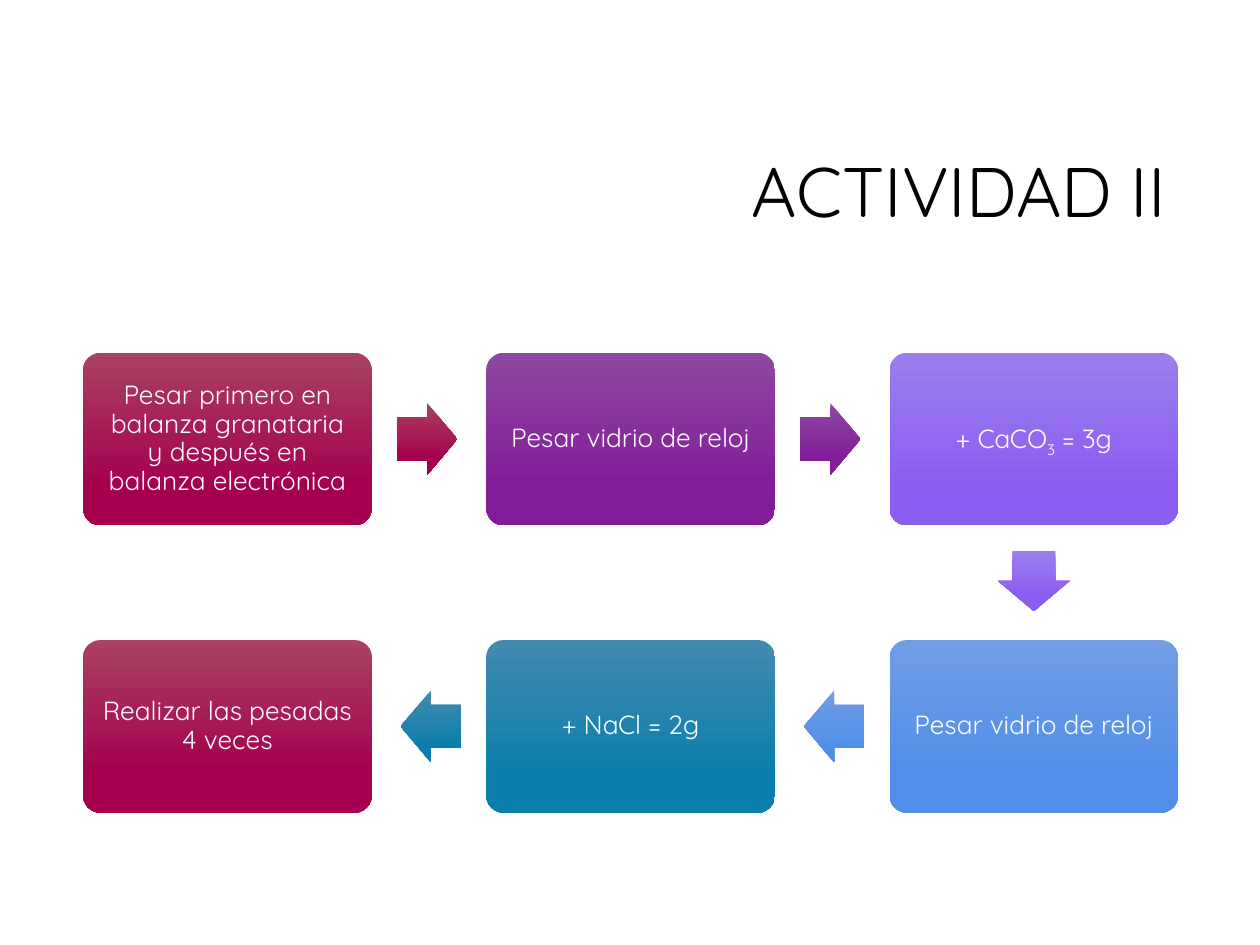
from pptx import Presentation
from pptx import util as u
from pptx.dml.color import RGBColor
from pptx.enum import shapes, text

# Content: (column, row), gradient, text runs (text, is subscript)
TITLE = "ACTIVIDAD II"
STEPS = [
    ((0, 0), "crimson", [("Pesar primero en balanza granataria y después en balanza electrónica", False)]),
    ((1, 0), "purple", [("Pesar vidrio de reloj", False)]),
    ((2, 0), "violet", [("+ CaCO", False), ("3", True), (" = 3g", False)]),
    ((2, 1), "blue", [("Pesar vidrio de reloj", False)]),
    ((1, 1), "teal", [("+ NaCl = 2g", False)]),
    ((0, 1), "crimson", [("Realizar las pesadas 4 veces", False)]),
]
COLORS = {
    "title": "000000",
    "step": "FFFFFF",
    "crimson": ("A94263", "A4004E"),
    "purple": ("8D48A0", "831C9A"),
    "violet": ("9D7DED", "8A5EF1"),
    "blue": ("729DE5", "518EE9"),
    "teal": ("438AB0", "0B7FAB"),
}
FONT = "Quicksand"

# Grid, in inches
LEFT, TOP = 0.66, 2.8
STEP_W, STEP_H = 2.29, 1.37
PITCH_X, PITCH_Y = 3.2, 2.28
ARROW_W, ARROW_H, ARROW_GAP = 0.48, 0.57, 0.2
ROTATION = {(1, 0): 0, (0, 1): 90, (-1, 0): 180}


def write(frame, runs, size, color, align, inset=None):
    frame.word_wrap = True
    frame.vertical_anchor = text.MSO_ANCHOR.MIDDLE
    if inset is not None:
        for side in ("left", "right", "top", "bottom"):
            setattr(frame, f"margin_{side}", u.Inches(inset))
    paragraph = frame.paragraphs[0]
    paragraph.alignment = align
    paragraph.line_spacing = 0.9
    for words, subscript in runs:
        run = paragraph.add_run()
        run.text = words
        for name, value in {"name": FONT, "size": u.Pt(size)}.items():
            setattr(run.font, name, value)
        run.font.color.rgb = RGBColor.from_string(color)
        if subscript:
            run._r.get_or_add_rPr().set("baseline", "-25000")


def add_block(slide, kind, box, adjustments, gradient):
    block = slide.shapes.add_shape(kind, *map(u.Inches, box))
    block.shadow.inherit = False
    block.line.fill.background()
    for i, value in enumerate(adjustments):
        block.adjustments[i] = value
    block.fill.gradient()
    block.fill.gradient_angle = 270
    for stop, position, color in zip(block.fill.gradient_stops, (0, 0.78), COLORS[gradient]):
        stop.position = position
        stop.color.rgb = RGBColor.from_string(color)
    # Keep the shading vertical when the block is turned
    block._element.spPr.find("{*}gradFill").set("rotWithShape", "0")
    return block


def main():
    deck = Presentation()
    deck.slide_width, deck.slide_height = u.Inches(10), u.Inches(7.5)
    slide = deck.slides.add_slide(deck.slide_layouts[6])

    # Title
    title = slide.shapes.add_textbox(*map(u.Inches, (2.38, 0.84, 6.97, 1.41)))
    write(title.text_frame, [(TITLE, False)], 40, COLORS["title"], text.PP_ALIGN.RIGHT)

    for i, ((column, row), gradient, runs) in enumerate(STEPS):
        # Step
        x, y = LEFT + column * PITCH_X, TOP + row * PITCH_Y
        step = add_block(slide, shapes.MSO_SHAPE.ROUNDED_RECTANGLE,
                         (x, y, STEP_W, STEP_H), [0.1], gradient)
        write(step.text_frame, runs, 15, COLORS["step"], text.PP_ALIGN.CENTER, 0.1)

        # Arrow towards the next step
        if i + 1 < len(STEPS):
            next_column, next_row = STEPS[i + 1][0]
            dx, dy = next_column - column, next_row - row
            reach = ARROW_GAP + ARROW_W / 2
            center_x = x + STEP_W / 2 + dx * (STEP_W / 2 + reach)
            center_y = y + STEP_H / 2 + dy * (STEP_H / 2 + reach)
            arrow = add_block(slide, shapes.MSO_SHAPE.RIGHT_ARROW,
                              (center_x - ARROW_W / 2, center_y - ARROW_H / 2, ARROW_W, ARROW_H),
                              [0.6, 0.5], gradient)
            arrow.rotation = ROTATION[dx, dy]

    deck.save("out.pptx")


if __name__ == "__main__":
    main()
